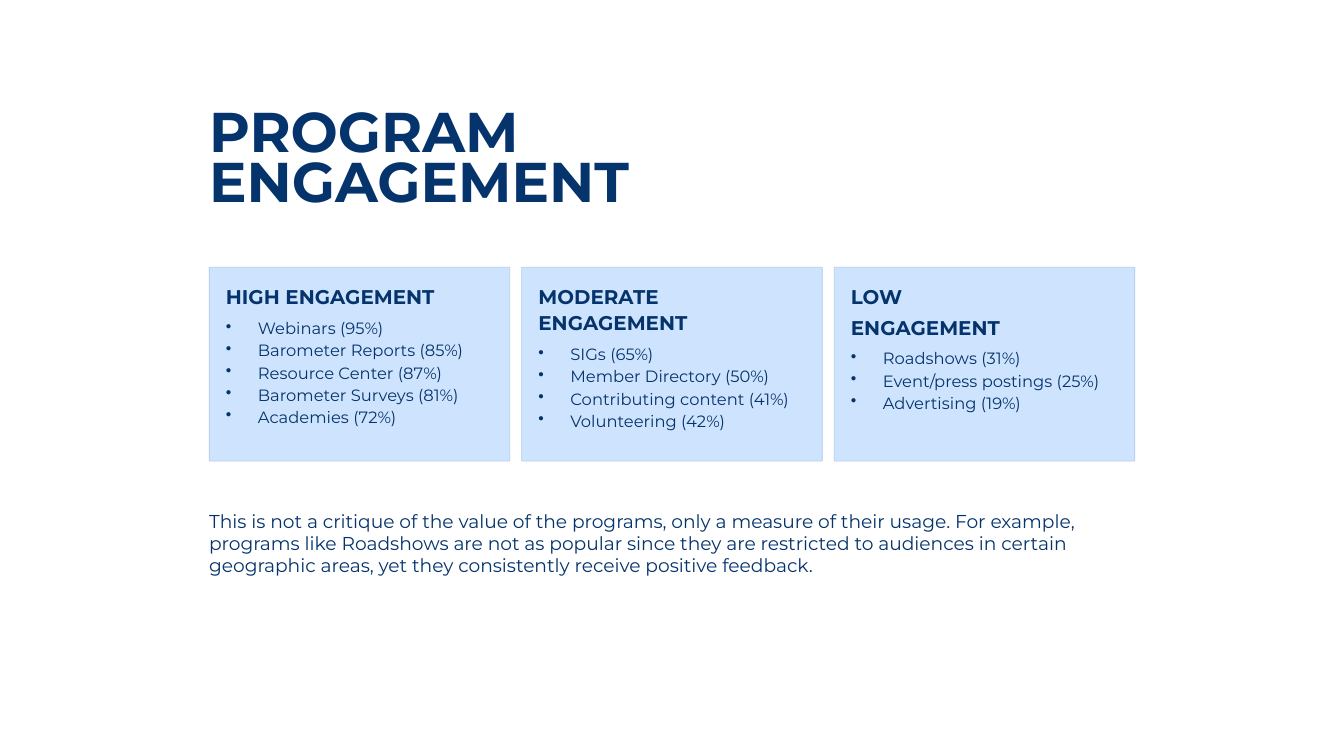
from pptx import Presentation
from pptx.dml.color import RGBColor as RGB
from pptx.enum.shapes import MSO_SHAPE as SHAPE
from pptx.oxml.ns import qn
from pptx.util import Inches, Pt
from lxml.etree import SubElement

COLORS = {"navy": "05346C", "card": "CEE3FD", "edge": "B4C9E3", "white": "FFFFFF"}
STYLES = {
    "title": {"size": 48, "bold": True, "spacing": 43.5},
    "heading": {"size": 17, "bold": True, "spacing": 21.5},
    "bullet": {"size": 14, "bold": False, "spacing": 19},
    "note": {"size": 16, "bold": False, "spacing": 19},
}
COLS, ROWS = 16, 9
LEFT, CARD_TOP, CARD_W, CARD_H = 2.49, 3.18, 3.58, 2.31
PITCH, PAD, INDENT, LIST_STEP = 3.72, 0.2, 0.38, 0.31
INNER_W = CARD_W - 2 * PAD

# Each card: heading lines as (text, top, width, height, wrap), list top, items
CARDS = [
    ([("HIGH ENGAGEMENT", 3.38, 2.54, 0.3, False)], 3.76,
     ["Webinars (95%)", "Barometer Reports (85%)", "Resource Center (87%)",
      "Barometer Surveys (81%)", "Academies (72%)"]),
    ([("MODERATE ENGAGEMENT", 3.38, INNER_W, 0.6, True)], 4.07,
     ["SIGs (65%)", "Member Directory (50%)", "Contributing content (41%)",
      "Volunteering (42%)"]),
    ([("LOW", 3.38, 2.42, 0.3, False), ("ENGAGEMENT", 3.74, 2.42, 0.3, False)], 4.12,
     ["Roadshows (31%)", "Event/press postings (25%)", "Advertising (19%)"]),
]
NOTE = ("This is not a critique of the value of the programs, only a measure of their "
        "usage. For example, programs like Roadshows are not as popular since they are "
        "restricted to audiences in certain geographic areas, yet they consistently "
        "receive positive feedback.")


class Deck:
    """Holds the style and the current slide; lengths are grid columns and rows."""

    def __init__(self, font):
        self.font = font
        self.prs = Presentation()
        self.prs.slide_width, self.prs.slide_height = Inches(16), Inches(9)
        self.s = self.prs.slides.add_slide(self.prs.slide_layouts[6])
        fill = self.s.background.fill
        fill.solid()
        fill.fore_color.rgb = RGB.from_string(COLORS["white"])

    def place(self, x, y, w, h):
        col, row = self.prs.slide_width / COLS, self.prs.slide_height / ROWS
        return [round(v) for v in (x * col, y * row, w * col, h * row)]

    def card(self, x, y, w, h):
        sp = self.s.shapes.add_shape(SHAPE.ROUNDED_RECTANGLE, *self.place(x, y, w, h))
        sp.adjustments[0] = 0.004
        sp.shadow.inherit = False
        sp.fill.solid()
        sp.fill.fore_color.rgb = RGB.from_string(COLORS["card"])
        sp.line.color.rgb = RGB.from_string(COLORS["edge"])
        sp.line.width = Pt(0.6)

    def text(self, x, y, w, h, lines, style, wrap=True, bullets=False):
        tf = self.s.shapes.add_textbox(*self.place(x, y, w, h)).text_frame
        frame = {"word_wrap": wrap, "margin_left": 0, "margin_top": 0,
                 "margin_right": 0, "margin_bottom": 0}
        for name, value in frame.items():
            setattr(tf, name, value)
        look = STYLES[style]
        font = {"name": self.font, "size": Pt(look["size"]), "bold": look["bold"]}
        for i, line in enumerate(lines):
            p = tf.add_paragraph() if i else tf.paragraphs[0]
            if bullets:
                self.bullet(p)
            p.line_spacing = Pt(look["spacing"])
            r = p.add_run()
            r.text = line
            for name, value in font.items():
                setattr(r.font, name, value)
            r.font.color.rgb = RGB.from_string(COLORS["navy"])

    def bullet(self, p):
        pPr = p._p.get_or_add_pPr()
        pPr.set("marL", str(Inches(INDENT)))
        pPr.set("indent", str(-Inches(INDENT)))
        SubElement(pPr, qn("a:buChar")).set("char", "•")


def main():
    deck = Deck("Montserrat")

    # Title
    deck.text(LEFT, 1.34, 6.44, 0.6, ["PROGRAM ENGAGEMENT"], "title", wrap=False)

    # Engagement cards
    for i, (headings, list_top, items) in enumerate(CARDS):
        x = LEFT + i * PITCH
        deck.card(x, CARD_TOP, CARD_W, CARD_H)
        for heading, top, width, height, wrap in headings:
            deck.text(x + PAD, top, width, height, [heading], "heading", wrap)
        deck.text(x + PAD, list_top, INNER_W, len(items) * LIST_STEP, items,
                  "bullet", bullets=True)

    # Closing note
    deck.text(LEFT, 6.07, 11.03, 1.58, [NOTE], "note")

    deck.prs.save("out.pptx")


if __name__ == "__main__":
    main()
